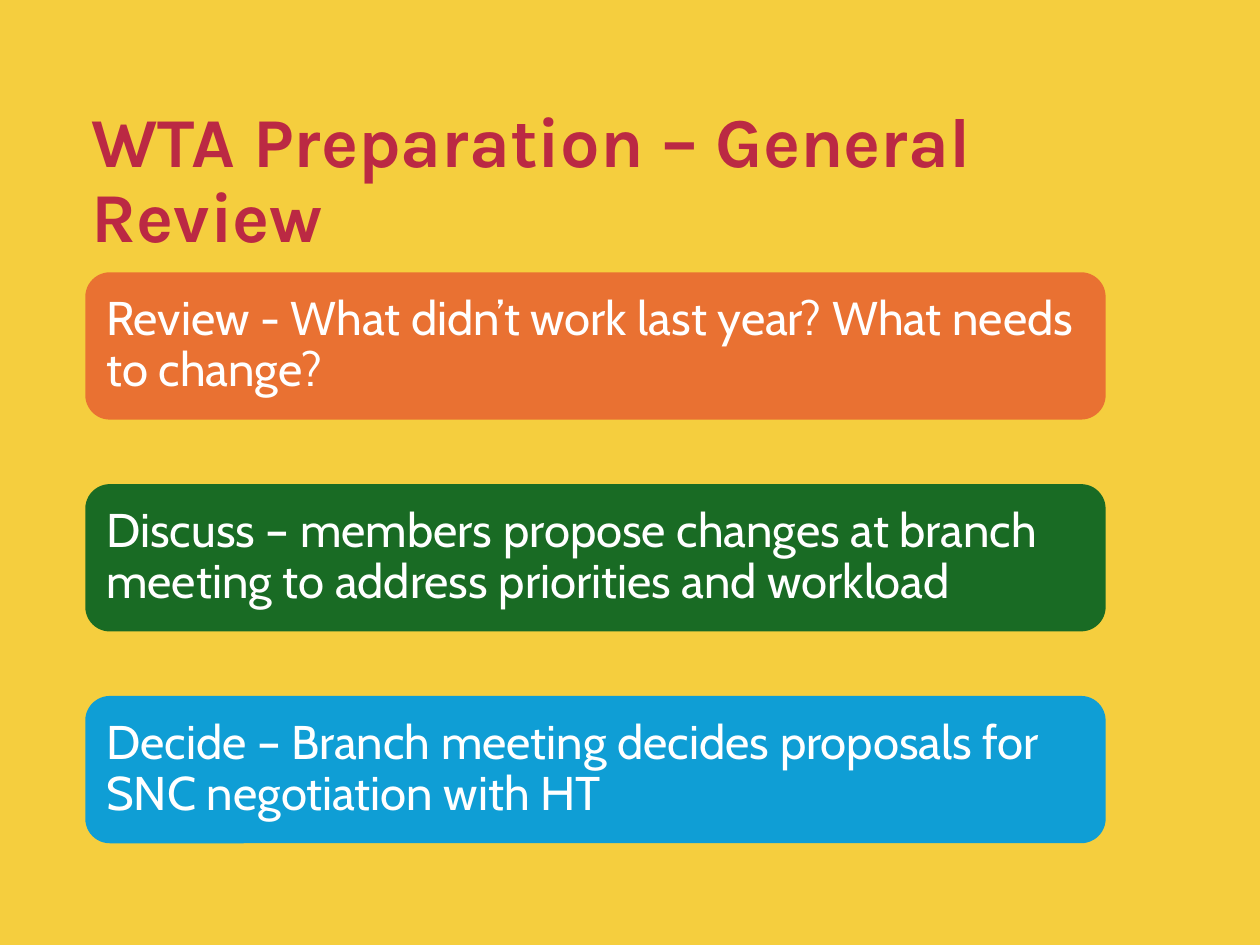
"""Build the WTA preparation slide: a title above three review steps."""
from pptx import Presentation
from pptx import util as u
from pptx.dml import color
from pptx.enum import shapes, text

COLORS = {"background": "F5CE3E", "title": "BB2943", "text": "FFFFFF",
          "review": "E97132", "discuss": "196B24", "decide": "0F9ED5"}
STEPS = [
    ("review", "Review - What didn’t work last year? What needs to change?"),
    ("discuss", "Discuss – members propose changes at branch meeting to address priorities and workload"),
    ("decide", "Decide – Branch meeting decides proposals for SNC negotiation with HT"),
]


def rgb(name):
    return color.RGBColor.from_string(COLORS[name])


def write(tf, words, font, size, name, bold=False):
    tf.word_wrap = True
    p = tf.paragraphs[0]
    p.alignment = text.PP_ALIGN.LEFT
    p.line_spacing = 0.9
    r = p.add_run()
    r.text = words
    r.font.name = font
    r.font.size = u.Pt(size)
    r.font.bold = bold
    r.font.color.rgb = rgb(name)


prs = Presentation()
prs.slide_width, prs.slide_height = u.Cm(25.4), u.Cm(19.05)
s = prs.slides.add_slide(prs.slide_layouts[6])
s.background.fill.solid()
s.background.fill.fore_color.rgb = rgb("background")

title = s.shapes.add_textbox(u.Cm(1.6), u.Cm(2.03), u.Cm(22.17), u.Cm(2.06))
write(title.text_frame, "WTA Preparation – General Review", "Karla", 40, "title", True)

top, pitch = 5.49, 4.27
for i, (name, words) in enumerate(STEPS):
    sp = s.shapes.add_shape(shapes.MSO_SHAPE.ROUNDED_RECTANGLE,
                            u.Cm(1.72), u.Cm(top + i * pitch), u.Cm(20.57), u.Cm(2.97))
    sp.shadow.inherit = False
    sp.fill.solid()
    sp.fill.fore_color.rgb = rgb(name)
    sp.line.fill.background()
    tf = sp.text_frame
    tf.margin_left = tf.margin_right = tf.margin_top = tf.margin_bottom = u.Cm(0.28)
    tf.vertical_anchor = text.MSO_ANCHOR.MIDDLE
    write(tf, words, "Cabin", 27, "text")

prs.save("out.pptx")
